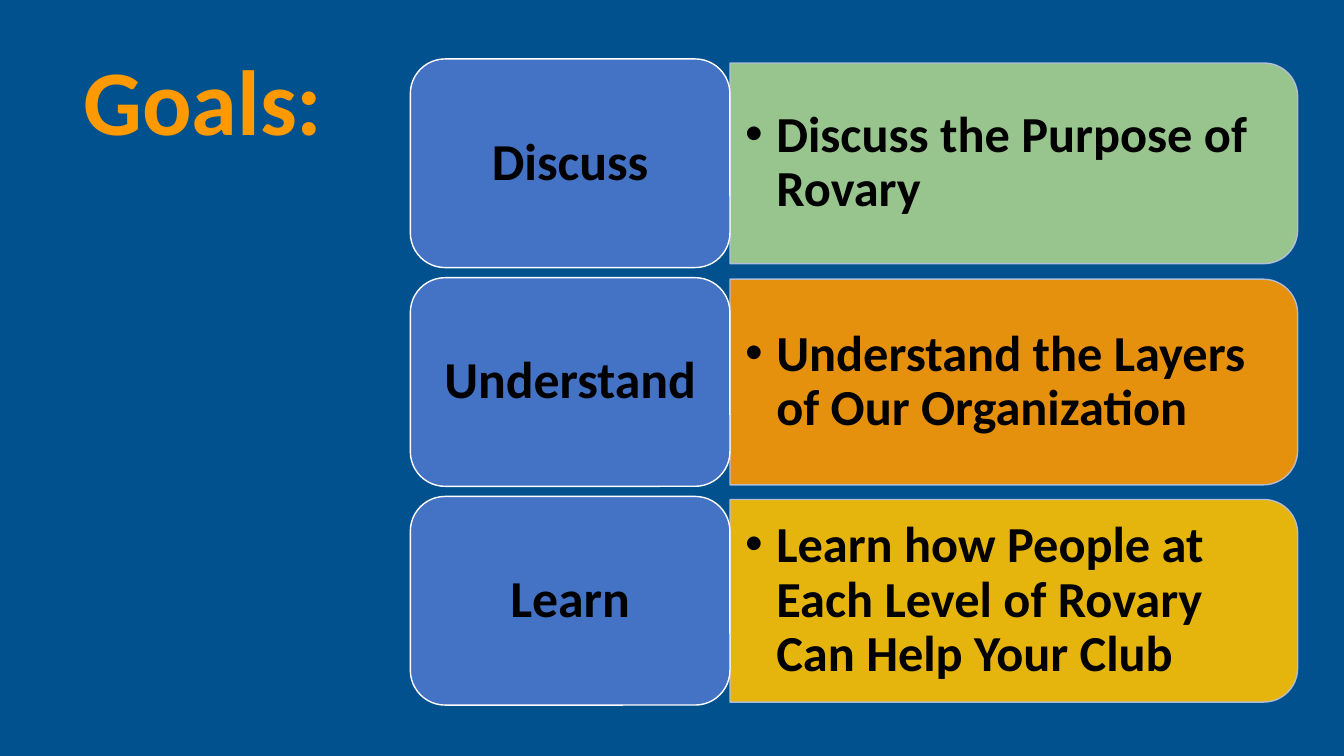
from lxml import etree
from pptx import Presentation
from pptx import util as u
from pptx.dml.color import RGBColor
from pptx.enum import shapes, text
from pptx.oxml import parse_xml
from pptx.oxml.ns import nsdecls, qn

COLORS = {
    "background": "00518E",
    "title": "FF9900",
    "title_outline": "FFC000",
    "label": "4472C4",
    "label_line": "FFFFFF",
    "panel_line": "B9C2E1",
    "text": "000000",
    "green": "A9D18E",
    "orange": "FF9900",
    "gold": "FFC000",
}

GOALS = [
    ("Discuss", "Discuss the Purpose of Rovary", "green", 1.99),
    ("Understand", "Understand the Layers of Our Organization", "orange", 2.04),
    ("Learn", "Learn how People at Each Level of Rovary Can Help Your Club", "gold", 2.01),
]
FIRST_CENTER, PITCH = 1.62, 2.17
LABEL_LEFT, LABEL_WIDTH, LABEL_HEIGHT = 4.07, 3.17, 2.07
PANEL_LEFT, PANEL_WIDTH = LABEL_LEFT + LABEL_WIDTH, 5.63


class GoalSlide:
    font = "Calibri"

    def __init__(self, prs):
        self.s = prs.slides.add_slide(prs.slide_layouts[6])
        fill = self.s.background.fill
        fill.solid()
        fill.fore_color.rgb = self.rgb("background")

    def rgb(self, name):
        return RGBColor.from_string(COLORS[name])

    def put_text(self, sp, words, size, color="text", align=text.PP_ALIGN.LEFT, inset=(0.1, 0.05)):
        tf = sp.text_frame
        tf.word_wrap = True
        tf.vertical_anchor = text.MSO_ANCHOR.MIDDLE
        tf.margin_left = tf.margin_right = u.Inches(inset[0])
        tf.margin_top = tf.margin_bottom = u.Inches(inset[1])
        p = tf.paragraphs[0]
        p.text = words
        p.alignment = align
        p.line_spacing = 0.9
        r = p.runs[0]
        r.font.name = self.font
        r.font.size = u.Pt(size)
        r.font.bold = True
        r.font.color.rgb = self.rgb(color)
        return p

    def box(self, left, top, width, height):
        return self.s.shapes.add_textbox(*map(u.Inches, (left, top, width, height)))

    def shape(self, kind, left, top, width, height, fill, line):
        sp = self.s.shapes.add_shape(kind, *map(u.Inches, (left, top, width, height)))
        sp.shadow.inherit = False
        sp.fill.solid()
        sp.fill.fore_color.rgb = self.rgb(fill)
        sp.line.color.rgb = self.rgb(line)
        sp.line.width = u.Pt(1)
        return sp

    def title(self, words):
        p = self.put_text(self.box(0.73, 0.32, 6.57, 1.45), words, 66, "title")
        p.runs[0]._r.get_or_add_rPr().insert(0, parse_xml(
            f'<a:ln {nsdecls("a")} w="9525"><a:solidFill>'
            f'<a:srgbClr val="{COLORS["title_outline"]}"/></a:solidFill></a:ln>'))

    def panel(self, center, height, color):
        sp = self.shape(shapes.MSO_SHAPE.ROUND_2_SAME_RECTANGLE,
                        PANEL_LEFT + (PANEL_WIDTH - height) / 2, center - PANEL_WIDTH / 2,
                        height, PANEL_WIDTH, color, "panel_line")
        sp.rotation = 90
        for clr in sp._element.spPr.iter(qn("a:srgbClr")):
            etree.SubElement(clr, qn("a:alpha")).set("val", "90000")

    def bullet(self, center, words):
        sp = self.box(PANEL_LEFT, center - 0.9, 5.53, 1.8)
        p = self.put_text(sp, words, 36, inset=(0.15, 0.07))
        pPr = p._p.get_or_add_pPr()
        pPr.set("marL", str(u.Inches(0.31)))
        pPr.set("indent", str(-u.Inches(0.31)))
        etree.SubElement(pPr, qn("a:buFont")).set("typeface", "Arial")
        etree.SubElement(pPr, qn("a:buChar")).set("char", "•")

    def label(self, center, words):
        sp = self.shape(shapes.MSO_SHAPE.ROUNDED_RECTANGLE, LABEL_LEFT, center - LABEL_HEIGHT / 2,
                        LABEL_WIDTH, LABEL_HEIGHT, "label", "label_line")
        self.put_text(sp, words, 37, align=text.PP_ALIGN.CENTER, inset=(0.15, 0.08))


def main():
    prs = Presentation()
    prs.slide_width, prs.slide_height = u.Inches(13.33), u.Inches(7.5)
    slide = GoalSlide(prs)
    slide.title("Goals:")
    for i, (name, goal, color, height) in enumerate(GOALS):
        center = FIRST_CENTER + i * PITCH
        slide.panel(center, height, color)
        slide.bullet(center, goal)
        slide.label(center, name)
    prs.save("out.pptx")


if __name__ == "__main__":
    main()
